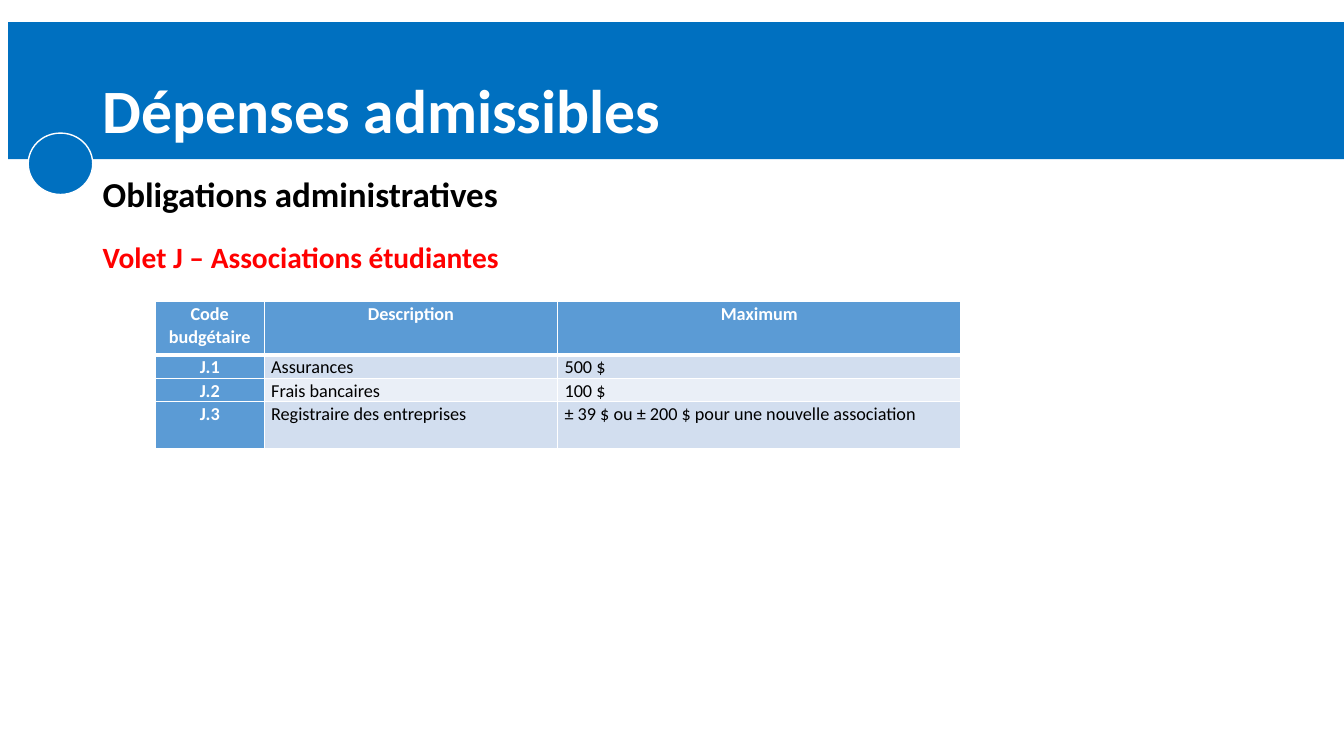
from lxml import etree
from pptx import Presentation
from pptx.dml.color import RGBColor
from pptx.enum.shapes import MSO_SHAPE
from pptx.enum.text import MSO_ANCHOR, PP_ALIGN
from pptx.oxml.ns import qn
from pptx.util import Inches, Pt

RECTANGLE, OVAL = MSO_SHAPE.RECTANGLE, MSO_SHAPE.OVAL
LEFT, CENTER = PP_ALIGN.LEFT, PP_ALIGN.CENTER
MIDDLE = MSO_ANCHOR.MIDDLE
TITLE_ONLY = 5

FONT = "Calibri"
BLUE, WHITE, BLACK, RED = "0070C0", "FFFFFF", "000000", "FF0000"
HEADER_BLUE = "5B9BD5"
ROW_TINTS = ["D2DEEF", "EAEFF7"]

EXPENSES = [
    ["Code budgétaire", "Description", "Maximum"],
    ["J.1", "Assurances", "500 $"],
    ["J.2", "Frais bancaires", "100 $"],
    ["J.3", "Registraire des entreprises",
     "± 39 $ ou ± 200 $ pour une nouvelle association"],
]
COLUMN_WIDTHS = [1.08, 2.91, 4]
ROW_HEIGHTS = [0.53, 0.23, 0.23, 0.47]


def color(hex_code):
    return RGBColor.from_string(hex_code)


def place(shape, left, top, width, height):
    shape.left, shape.top = Inches(left), Inches(top)
    shape.width, shape.height = Inches(width), Inches(height)


def write(paragraph, text, size, hex_code, bold=True, align=LEFT, spacing=1.0):
    paragraph.text = text
    paragraph.alignment = align
    paragraph.line_spacing = spacing
    font = paragraph.runs[0].font
    font.name, font.size, font.bold = FONT, Pt(size), bold
    font.color.rgb = color(hex_code)


def add_blue_shape(slide, kind, box, outline=None):
    shape = slide.shapes.add_shape(kind, *map(Inches, box))
    shape.shadow.inherit = False
    shape.fill.solid()
    shape.fill.fore_color.rgb = color(BLUE)
    if outline:
        shape.line.color.rgb = color(outline)
        shape.line.width = Pt(1)
    else:
        shape.line.fill.background()
    return shape


def add_title(slide, text):
    title = slide.shapes.title
    place(title, 0.92, 0.4, 11.5, 1.45)
    title.text_frame.vertical_anchor = MIDDLE
    write(title.text_frame.paragraphs[0], text, 44, WHITE, spacing=0.9)


def add_headings(slide, heading, section):
    box = slide.shapes.add_textbox(
        Inches(0.92), Inches(1.66), Inches(11.73), Inches(1.1))
    frame = box.text_frame
    frame.word_wrap = True
    write(frame.paragraphs[0], heading, 25, BLACK)
    section_line = frame.add_paragraph()
    write(section_line, section, 21, RED)
    section_line.space_before = Pt(18)


def set_border(cell, side, points):
    properties = cell._tc.get_or_add_tcPr()
    line = etree.SubElement(properties, qn(f"a:ln{side}"), w=str(Pt(points)))
    fill = etree.SubElement(line, qn("a:solidFill"))
    etree.SubElement(fill, qn("a:srgbClr"), val=WHITE)


def format_cell(cell, text, row, column):
    is_label = row == 0 or column == 0
    cell.margin_left = cell.margin_right = Inches(0.07)
    cell.margin_top = cell.margin_bottom = 0
    write(cell.text_frame.paragraphs[0], text, 13,
          WHITE if is_label else BLACK, bold=is_label,
          align=CENTER if is_label else LEFT, spacing=1.07)
    # The rule under the header row is thicker
    for side in "LRTB":
        under_header = (row, side) in [(0, "B"), (1, "T")]
        set_border(cell, side, 3 if under_header else 1)
    cell.fill.solid()
    cell.fill.fore_color.rgb = color(
        HEADER_BLUE if is_label else ROW_TINTS[(row - 1) % 2])


def add_expense_table(slide):
    table = slide.shapes.add_table(
        len(ROW_HEIGHTS), len(COLUMN_WIDTHS), Inches(1.54), Inches(2.99),
        Inches(sum(COLUMN_WIDTHS)), Inches(sum(ROW_HEIGHTS))).table
    for column, width in zip(table.columns, COLUMN_WIDTHS):
        column.width = Inches(width)
    for row, height in zip(table.rows, ROW_HEIGHTS):
        row.height = Inches(height)
    for r, texts in enumerate(EXPENSES):
        for c, text in enumerate(texts):
            format_cell(table.cell(r, c), text, r, c)


def main():
    prs = Presentation()
    prs.slide_width, prs.slide_height = Inches(13.33), Inches(7.5)
    slide = prs.slides.add_slide(prs.slide_layouts[TITLE_ONLY])

    # Header band, sent behind the title
    band = add_blue_shape(slide, RECTANGLE, (0.08, 0.22, 13.25, 1.36))
    slide.shapes.title._element.addprevious(band._element)
    add_title(slide, "Dépenses admissibles")

    # Headings and the circle on the band's edge
    add_headings(slide, "Obligations administratives",
                 "Volet J – Associations étudiantes")
    add_blue_shape(slide, OVAL, (0.28, 1.32, 0.64, 0.61), outline=WHITE)

    # Eligible expenses
    add_expense_table(slide)
    prs.save("out.pptx")


if __name__ == "__main__":
    main()
